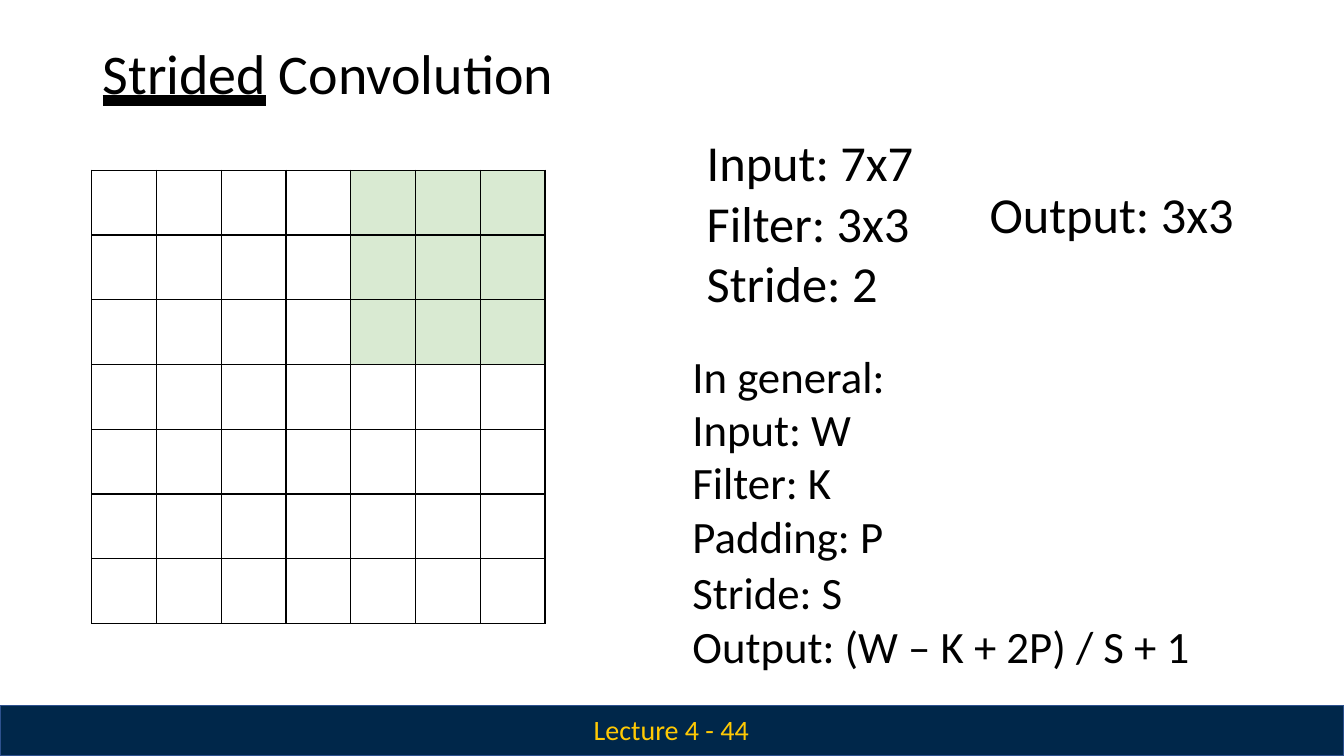
from dataclasses import dataclass

from lxml.etree import SubElement
from pptx import Presentation
from pptx.dml.color import RGBColor
from pptx.enum.shapes import MSO_SHAPE
from pptx.enum.text import MSO_UNDERLINE
from pptx.oxml.ns import qn
from pptx.util import Cm, Pt


@dataclass(frozen=True)
class Theme:
    font: str = "Calibri"
    ink: str = "000000"
    paper: str = "FFFFFF"
    window: str = "D9EAD2"
    band: str = "00274A"
    band_edge: str = "2D518E"
    band_text: str = "FFC904"
    title_size: int = 40
    example_size: int = 36
    general_size: int = 32
    footer_size: int = 20


THEME = Theme()
GRID_SIZE = 7
FILTER_SIZE = 3
EXAMPLE = ["Input: 7x7", "Filter: 3x3", "Stride: 2"]
GENERAL = ["In general:", "Input: W", "Filter: K", "Padding: P",
           "Stride: S", "Output: (W – K + 2P) / S + 1"]


def rgb(value):
    return RGBColor.from_string(value)


def style_run(run, size, color):
    run.font.name = THEME.font
    run.font.size = Pt(size)
    run.font.color.rgb = rgb(color)


def add_lines(page, box, lines, size, color=THEME.ink, pitch=None):
    """Place one paragraph per line in box (left, top, width, height in cm)."""
    frame = page.shapes.add_textbox(*map(Cm, box)).text_frame
    frame.word_wrap = True
    frame.margin_left = frame.margin_right = 0
    frame.margin_top = frame.margin_bottom = 0
    frame.text = "\n".join(lines)
    for para in frame.paragraphs:
        if pitch:
            para.line_spacing = Pt(pitch)
        for run in para.runs:
            style_run(run, size, color)
    return frame


def add_title(page, box):
    para = add_lines(page, box, ["Strided"], THEME.title_size).paragraphs[0]
    para.runs[0].font.underline = MSO_UNDERLINE.HEAVY_LINE
    rest = para.add_run()
    rest.text = " Convolution"
    style_run(rest, THEME.title_size, THEME.ink)


def draw_borders(cell):
    properties = cell._tc.get_or_add_tcPr()
    for index, side in enumerate(("a:lnL", "a:lnR", "a:lnT", "a:lnB")):
        line = properties.makeelement(qn(side), {"w": str(Pt(1))})
        fill = SubElement(line, qn("a:solidFill"))
        SubElement(fill, qn("a:srgbClr"), val=THEME.ink)
        properties.insert(index, line)


def add_input_grid(page, box):
    """Draw the input cells and shade the filter window at the top right."""
    table = page.shapes.add_table(GRID_SIZE, GRID_SIZE, *map(Cm, box)).table
    table.first_row = table.horz_banding = False
    for column in table.columns:
        column.width = Cm(box[2] / GRID_SIZE)
    for row_index, row in enumerate(table.rows):
        row.height = Cm(box[3] / GRID_SIZE)
        for column_index, cell in enumerate(row.cells):
            covered = (row_index < FILTER_SIZE
                       and column_index >= GRID_SIZE - FILTER_SIZE)
            cell.fill.solid()
            cell.fill.fore_color.rgb = rgb(THEME.window if covered else THEME.paper)
            draw_borders(cell)


def add_example(page, box):
    left, top, width, height = box
    add_lines(page, (left, top, 6, height), EXAMPLE, THEME.example_size, pitch=43)
    add_lines(page, (left + 7.13, top + 1.29, width - 7.13, 1.6),
              ["Output: 3x3"], THEME.example_size)


def add_general_rule(page, box):
    frame = add_lines(page, box, GENERAL, THEME.general_size, pitch=38.1)
    frame.paragraphs[GENERAL.index("Stride: S")].space_before = Pt(2.5)


def add_footer(page, box):
    left, top, width, height = box
    band = page.shapes.add_shape(MSO_SHAPE.RECTANGLE, *map(Cm, box))
    band.shadow.inherit = False
    band.fill.solid()
    band.fill.fore_color.rgb = rgb(THEME.band)
    band.line.color.rgb = rgb(THEME.band_edge)
    band.line.width = Pt(1)
    add_lines(page, (left + 14.96, top + 0.18, 4.1, 0.87),
              ["Lecture 4 - 44"], THEME.footer_size, THEME.band_text)


def main():
    deck = Presentation()
    deck.slide_width, deck.slide_height = Cm(33.87), Cm(19.05)
    page = deck.slides.add_slide(deck.slide_layouts[6])
    add_footer(page, (0, 17.78, 33.87, 1.27))
    add_title(page, (2.59, 0.98, 29.1, 1.9))
    add_input_grid(page, (2.31, 4.29, 11.43, 11.43))
    add_example(page, (17.81, 3.32, 13.8, 4.6))
    add_general_rule(page, (17.45, 8.79, 13.5, 8.2))
    deck.save("out.pptx")


if __name__ == "__main__":
    main()
